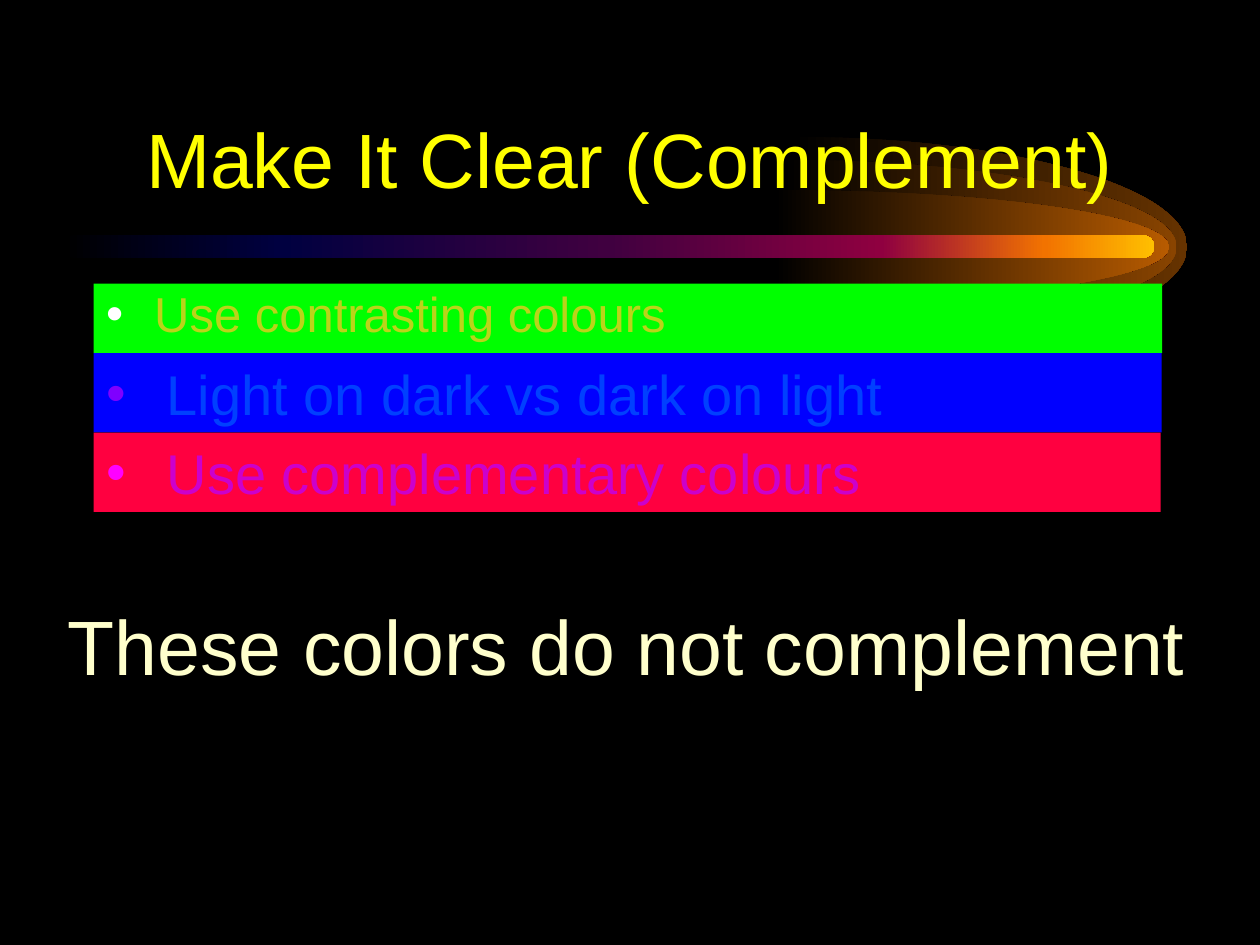
from lxml import etree
from pptx import Presentation
from pptx import util as u
from pptx.dml.color import RGBColor
from pptx.enum import shapes, text
from pptx.oxml import ns

Cm, Pt = u.Cm, u.Pt
COLOURS = {
    "black": "000000", "title": "FFFF00", "closing": "FFFFCC",
    "outer glow": "663300", "middle glow": "894400", "inner glow": "B75B00",
    "green": "00FF00", "blue": "0000FF", "red": "FF0040",
    "olive": "BAD41A", "azure": "0040FF", "purple": "CC00CC",
    "white": "FFFFFF", "violet": "7F00FF", "magenta": "FF00FF",
}
COMET_STOPS = [(0, "000000"), (20, "000040"), (50, "400040"),
               (75, "8F0040"), (90, "F27300"), (100, "FFBF00")]


def fade(shape, stops):
    """Fill a shape with a left-to-right gradient and no outline."""
    shape.shadow.inherit = False
    shape.line.fill.background()
    shape.fill.gradient()
    shape.fill.gradient_angle = 0
    stop_list = shape._element.spPr.find(".//" + ns.qn("a:gsLst"))
    for old in list(stop_list):
        stop_list.remove(old)
    for percent, colour in stops:
        stop = etree.SubElement(stop_list, ns.qn("a:gs"), pos=str(percent * 1000))
        etree.SubElement(stop, ns.qn("a:srgbClr"), val=colour)


def style(paragraph, size, colour):
    paragraph.font.name = "Arial"
    paragraph.font.size = Pt(size)
    paragraph.font.color.rgb = RGBColor.from_string(COLOURS[colour])


deck = Presentation()
deck.slide_width, deck.slide_height = Cm(25.4), Cm(19.05)
slide = deck.slides.add_slide(deck.slide_layouts[5])
slide.background.fill.solid()
slide.background.fill.fore_color.rgb = RGBColor.from_string(COLOURS["black"])

# Comet: three half-ellipse glows around one tail
axis_y, glow_length, bend = 4.98, 7.95, 0.55
for centre_x, half_height, colour in [(15.98, 2.22, "outer glow"),
                                      (15.77, 1.76, "middle glow"),
                                      (15.62, 1.15, "inner glow")]:
    rim = [(Cm(centre_x + x * glow_length), Cm(axis_y + y * half_height))
           for x, y in [(0, -1), (bend, -1), (1, -bend), (1, 0),
                        (1, bend), (bend, 1), (0, 1)]]
    outline = slide.shapes.build_freeform(*rim[0])
    outline.add_line_segments(rim[1:])
    glow = outline.convert_to_shape()
    # Each three line segments become one Bezier quarter
    lines = list(glow._element.spPr.iter(ns.qn("a:lnTo")))
    for first in (0, 3):
        curve = etree.Element(ns.qn("a:cubicBezTo"))
        lines[first].addprevious(curve)
        for line in lines[first:first + 3]:
            curve.append(line[0])
            line.getparent().remove(line)
    for spare in lines[6:]:
        spare.getparent().remove(spare)
    fade(glow, [(0, COLOURS["black"]), (100, COLOURS[colour])])

tail = slide.shapes.add_shape(shapes.MSO_SHAPE.ROUNDED_RECTANGLE,
                              Cm(1.27), Cm(4.74), Cm(22), Cm(0.46))
tail.adjustments[0] = 0.5
fade(tail, COMET_STOPS)

# Title, brought in front of the comet
title = slide.shapes.title
slide.shapes._spTree.append(title._element)
title.left, title.top, title.width, title.height = Cm(1.9), Cm(1.07), Cm(21.6), Cm(3.17)
title.text_frame.text = "Make It Clear (Complement)"
title.text_frame.vertical_anchor = text.MSO_ANCHOR.BOTTOM
title.text_frame.paragraphs[0].alignment = text.PP_ALIGN.CENTER
style(title.text_frame.paragraphs[0], 44, "title")

# Bulleted bars, stacked without gaps
bars = [
    ("Use contrasting colours", 28, "green", "olive", "white", 1.4, 21.54, 0.97),
    ("Light on dark vs dark on light", 32, "blue", "azure", "violet", 1.6, 21.53, 1.22),
    ("Use complementary colours", 32, "red", "purple", "magenta", 1.6, 21.51, 1.22),
]
top = 5.72
for wording, size, back, ink, bullet, height, width, indent in bars:
    bar = slide.shapes.add_shape(shapes.MSO_SHAPE.RECTANGLE,
                                 Cm(1.89), Cm(top), Cm(width), Cm(height))
    bar.shadow.inherit = False
    bar.fill.solid()
    bar.fill.fore_color.rgb = RGBColor.from_string(COLOURS[back])
    bar.line.fill.background()
    bar.text_frame.text = wording
    bar.text_frame.vertical_anchor = text.MSO_ANCHOR.TOP
    point = bar.text_frame.paragraphs[0]
    point.alignment = text.PP_ALIGN.LEFT
    style(point, size, ink)
    if size == 28:
        point.line_spacing = 0.9
        point.space_before = Pt(3.3)
    properties = point._p.get_or_add_pPr()
    properties.set("marL", str(Cm(indent)))
    properties.set("indent", str(-Cm(indent)))
    bullet_colour = etree.Element(ns.qn("a:buClr"))
    etree.SubElement(bullet_colour, ns.qn("a:srgbClr"), val=COLOURS[bullet])
    bullet_font = etree.Element(ns.qn("a:buFont"), typeface="Arial")
    bullet_mark = etree.Element(ns.qn("a:buChar"), char="•")
    run_defaults = properties.find(ns.qn("a:defRPr"))
    for part in (bullet_colour, bullet_font, bullet_mark):
        run_defaults.addprevious(part)
    top += height

# Closing remark
closing = slide.shapes.add_textbox(Cm(1.12), Cm(11.94), Cm(23.9), Cm(2.11))
closing.text_frame.word_wrap = False
closing.text_frame.text = "These colors do not complement"
style(closing.text_frame.paragraphs[0], 44, "closing")

deck.save("out.pptx")
